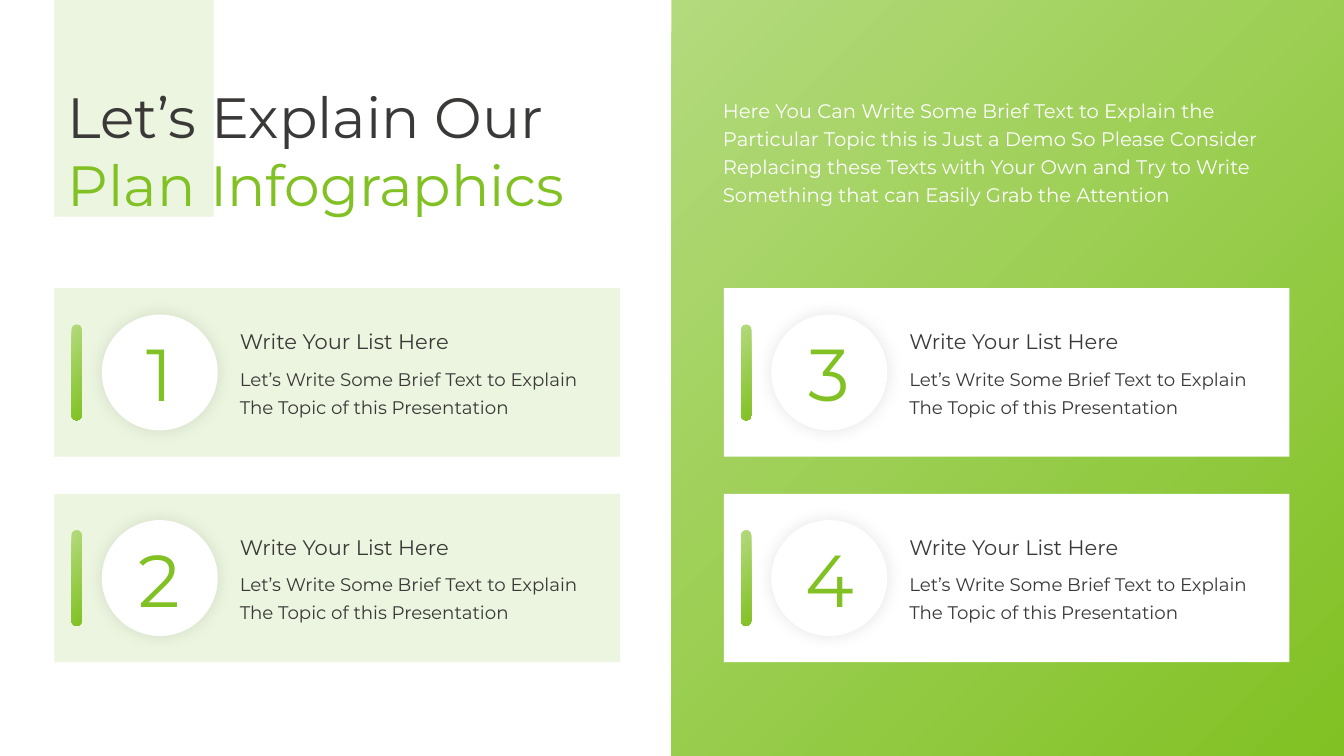
from pptx import Presentation
from pptx.dml.color import RGBColor
from pptx.enum.shapes import MSO_SHAPE
from pptx.enum.text import MSO_ANCHOR, MSO_AUTO_SIZE, PP_ALIGN
from pptx.oxml import parse_xml
from pptx.oxml.ns import nsdecls, qn
from pptx.util import Inches, Pt

RECTANGLE, ROUNDED, OVAL = MSO_SHAPE.RECTANGLE, MSO_SHAPE.ROUNDED_RECTANGLE, MSO_SHAPE.OVAL
LEFT, CENTER = PP_ALIGN.LEFT, PP_ALIGN.CENTER
TOP, MIDDLE = MSO_ANCHOR.TOP, MSO_ANCHOR.MIDDLE
NO_AUTOFIT = MSO_AUTO_SIZE.NONE

GREEN = RGBColor(0x81, 0xC1, 0x23)
LIGHT_GREEN = RGBColor(0xB3, 0xDA, 0x7D)
PALE = RGBColor(0xEB, 0xF5, 0xDF)
WHITE = RGBColor(0xFF, 0xFF, 0xFF)
DARK = RGBColor(0x3B, 0x38, 0x38)

CARD_WIDTH, CARD_HEIGHT = 5.61, 1.67
COLUMNS = ((0.54, PALE), (7.18, WHITE))
ROWS = (2.86, 4.9)
HEADING = "Write Your List Here"
DETAILS = ("Let’s Write Some Brief Text to Explain",
           "The Topic of this Presentation")
TITLE = ("Let’s Explain Our", "Plan Infographics")
INTRODUCTION = (
    "Here You Can Write Some Brief Text to Explain the",
    "Particular Topic this is Just a Demo So Please Consider",
    "Replacing these Texts with Your Own and Try to Write",
    "Something that can Easily Grab the Attention",
)


def write_text(shape, lines, size, colors, spacings=(None,), align=LEFT, anchor=TOP):
    frame = shape.text_frame
    frame.word_wrap = True
    frame.auto_size = NO_AUTOFIT
    frame.vertical_anchor = anchor
    for index, line in enumerate(lines):
        paragraph = frame.add_paragraph() if index else frame.paragraphs[0]
        paragraph.alignment = align
        paragraph.space_before = Pt(0)
        paragraph.line_spacing = spacings[min(index, len(spacings) - 1)]
        run = paragraph.add_run()
        run.text = line
        run.font.name = "Montserrat"
        run.font.size = Pt(size)
        run.font.color.rgb = colors[min(index, len(colors) - 1)]


class PlanSlide:
    """Draws the plan infographic's elements on one slide."""

    def __init__(self, presentation):
        self.slide = presentation.slides.add_slide(presentation.slide_layouts[1])
        self.shapes = self.slide.shapes

    def add_block(self, parent, kind, left, top, width, height, color=None):
        shape = parent.add_shape(kind, Inches(left), Inches(top), Inches(width), Inches(height))
        shape.shadow.inherit = False
        shape.line.fill.background()
        if color is None:
            self.fill_from_corner(shape)
        else:
            shape.fill.solid()
            shape.fill.fore_color.rgb = color
        return shape

    def fill_from_corner(self, shape):
        shape.fill.gradient()
        for stop, color, position in zip(shape.fill.gradient_stops, (GREEN, LIGHT_GREEN), (0, 1)):
            stop.color.rgb = color
            stop.position = position
        gradient = shape._element.spPr.find(qn("a:gradFill"))
        linear = gradient.find(qn("a:lin"))
        gradient.replace(linear, parse_xml(
            f'<a:path {nsdecls("a")} path="circle"><a:fillToRect l="100000" t="100000"/></a:path>'))

    def add_glow(self, shape):
        effects = shape._element.spPr.find(qn("a:effectLst"))
        effects.append(parse_xml(
            f'<a:outerShdw {nsdecls("a")} blurRad="{Pt(12)}" dist="0" dir="0" algn="ctr" '
            'rotWithShape="0"><a:srgbClr val="000000"><a:alpha val="10000"/></a:srgbClr>'
            '</a:outerShdw>'))

    def add_label(self, parent, left, top, width, height, lines, size, spacings=(None,)):
        box = parent.add_textbox(Inches(left), Inches(top), Inches(width), Inches(height))
        write_text(box, lines, size, (DARK,), spacings)

    def add_card(self, number, left, top, color):
        parent = self.shapes.add_group_shape().shapes
        self.add_block(parent, RECTANGLE, left, top, CARD_WIDTH, CARD_HEIGHT, color)
        circle = self.add_block(parent, OVAL, left + 0.47, top + 0.26, 1.15, 1.15, WHITE)
        self.add_glow(circle)
        frame = circle.text_frame
        frame.margin_left = frame.margin_right = frame.margin_top = frame.margin_bottom = 0
        write_text(circle, (str(number),), 52.5, (GREEN,), align=CENTER, anchor=MIDDLE)
        bar = self.add_block(parent, ROUNDED, left + 0.17, top + 0.36, 0.1, 0.95)
        bar.adjustments[0] = 0.5
        self.add_label(parent, left + 1.74, top + 0.35, 2.49, 0.35, (HEADING,), 15)
        self.add_label(parent, left + 1.74, top + 0.74, 3.64, 0.58, DETAILS, 13, (None, Pt(20)))

    def place(self, placeholder, left, top, width, height):
        placeholder.left, placeholder.top = Inches(left), Inches(top)
        placeholder.width, placeholder.height = Inches(width), Inches(height)
        self.shapes._spTree.append(placeholder._element)
        return placeholder

    def add_title(self):
        title = self.place(self.shapes.title, 0.57, 0.76, 5.54, 1.46)
        write_text(title, TITLE, 40.5, (DARK, GREEN))

    def add_introduction(self):
        body = self.place(self.slide.placeholders[1], 7.07, 0.89, 5.62, 1.2)
        write_text(body, INTRODUCTION, 14, (WHITE,), (Pt(20),))
        for paragraph in body.text_frame.paragraphs:
            properties = paragraph._p.get_or_add_pPr()
            properties.set("marL", "0")
            properties.set("indent", "0")
            properties.append(parse_xml(f'<a:buNone {nsdecls("a")}/>'))


def main():
    presentation = Presentation()
    presentation.slide_width = Inches(13.33)
    presentation.slide_height = Inches(7.5)
    plan = PlanSlide(presentation)
    plan.add_block(plan.shapes, RECTANGLE, 0.54, 0, 1.58, 2.15, PALE)
    plan.add_block(plan.shapes, RECTANGLE, 6.66, 0, 6.67, 7.5)
    plan.add_title()
    plan.add_introduction()
    for column, (left, color) in enumerate(COLUMNS):
        for row, top in enumerate(ROWS):
            plan.add_card(column * len(ROWS) + row + 1, left, top, color)
    presentation.save("out.pptx")


if __name__ == "__main__":
    main()
